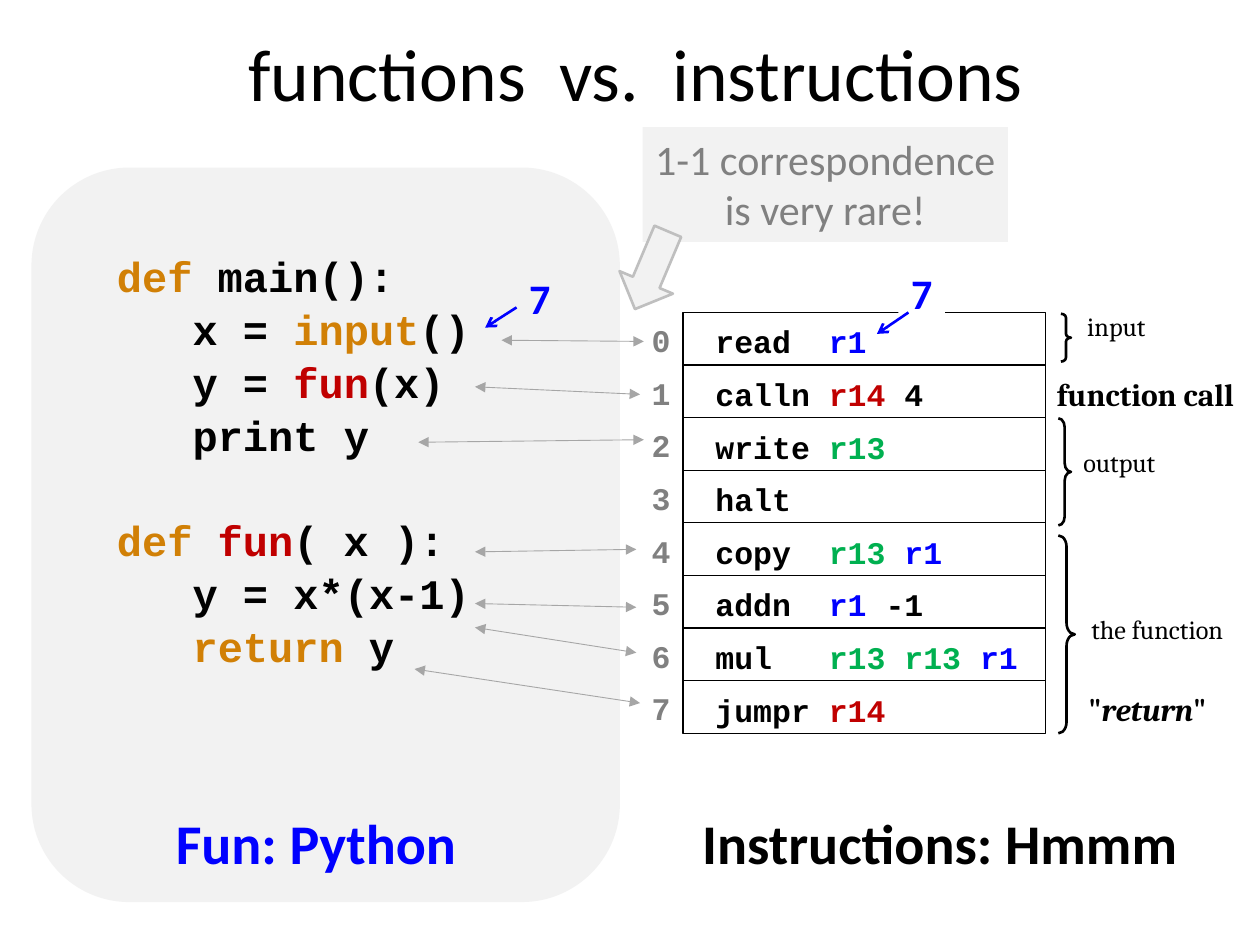
"""Build the slide that sets Python functions beside Hmmm instructions."""
from dataclasses import dataclass

from lxml import etree
from pptx import Presentation
from pptx.dml.color import RGBColor
from pptx.enum.shapes import MSO_CONNECTOR, MSO_SHAPE
from pptx.enum.text import MSO_ANCHOR, PP_ALIGN
from pptx.oxml.ns import qn
from pptx.util import Inches, Pt

LINE = MSO_CONNECTOR.STRAIGHT
RECT, ROUND = MSO_SHAPE.RECTANGLE, MSO_SHAPE.ROUNDED_RECTANGLE
BRACE, DOWN = MSO_SHAPE.RIGHT_BRACE, MSO_SHAPE.DOWN_ARROW
LEFT, CENTER, RIGHT = PP_ALIGN.LEFT, PP_ALIGN.CENTER, PP_ALIGN.RIGHT
TOP = MSO_ANCHOR.TOP


@dataclass(frozen=True)
class Theme:
    """Colours, fonts and type sizes."""
    black: str = "000000"
    white: str = "FFFFFF"
    panel: str = "F2F2F2"
    outline: str = "BFBFBF"
    link: str = "A6A6A6"
    grey: str = "808080"
    blue: str = "0000FF"
    red: str = "C00000"
    green: str = "00B050"
    orange: str = "D18006"
    sans: str = "Calibri"
    serif: str = "Cambria"
    mono: str = "Courier New"
    title: int = 42
    heading: int = 32
    code: int = 24
    label: int = 18
    note: int = 15


T = Theme()
ROW_LEFT, ROW_TOP, ROW_W, ROW_H = 5.42, 2.48, 2.88, 3.34 / 8

SOURCE = [
    (13, [("def", T.orange), (" main():", T.black)]),
    (13, [("   x = ", T.black), ("input", T.orange), ("()", T.black)]),
    (13, [("   y = ", T.black), ("fun", T.red), ("(x)", T.black)]),
    (13, [("   print y", T.black)]),
    (42.5, [("def ", T.orange), ("fun", T.red), ("( x ):", T.black)]),
    (13, [("   y = x*(x-1)", T.black)]),
    (13, [("   return ", T.orange), ("y", T.black)]),
]
INSTRUCTIONS = [
    [("read  ", T.black), ("r1", T.blue)],
    [("calln ", T.black), ("r14", T.red), (" 4", T.black)],
    [("write ", T.black), ("r13", T.green)],
    [("halt", T.black)],
    [("copy  ", T.black), ("r13 ", T.green), ("r1", T.blue)],
    [("addn  ", T.black), ("r1 ", T.blue), ("-1", T.black)],
    [("mul   ", T.black), ("r13 r13 ", T.green), ("r1", T.blue)],
    [("jumpr ", T.black), ("r14", T.red)],
]
LINKS = [
    (3.98, 2.7, 5.11, 2.71), (3.77, 3.07, 5.08, 3.13),
    (3.32, 3.51, 5.11, 3.49), (3.77, 4.38, 5.05, 4.36),
    (3.77, 4.79, 5.05, 4.82), (3.77, 4.98, 5.05, 5.18),
    (3.29, 5.31, 5.08, 5.58),
]
BRACES = [(8.42, 2.49, 0.08, 0.38, 0.39), (8.4, 3.32, 0.1, 0.85, 0.69),
          (8.4, 4.25, 0.13, 1.57, 0.69)]
NOTES = [("input", 8.53, 2.41, 0.99, LEFT), ("output", 8.5, 3.49, 1.13, LEFT),
         ("the function", 8.5, 4.82, 1.37, CENTER)]


class Canvas:
    """Draws styled elements on the current slide."""

    def __init__(self, s, theme):
        self.s, self.theme = s, theme

    def add_runs(self, p, runs, size, font, bold=False, italics=()):
        """Add coloured runs to a paragraph."""
        for text, colour in runs:
            r = p.add_run()
            r.text = text
            r.font.size, r.font.name, r.font.bold = Pt(size), font, bold
            r.font.italic = text in italics
            r.font.color.rgb = RGBColor.from_string(colour)

    def frame(self, sp, wrap=True):
        """Prepare the text frame of a shape."""
        tf = sp.text_frame
        tf.word_wrap, tf.vertical_anchor = wrap, TOP
        return tf

    def text(self, box, runs, size, font, align=LEFT, wrap=True, **style):
        """Add a text box of one paragraph."""
        sp = self.s.shapes.add_textbox(*map(Inches, box))
        p = self.frame(sp, wrap).paragraphs[0]
        p.alignment = align
        self.add_runs(p, runs, size, font, **style)
        return sp

    def code(self, box, lines):
        """Add a listing with one paragraph per line of code."""
        tf = self.frame(self.s.shapes.add_textbox(*map(Inches, box)))
        for i, (space, runs) in enumerate(lines):
            p = tf.add_paragraph() if i else tf.paragraphs[0]
            p.line_spacing, p.space_before = 0.6, Pt(space)
            self.add_runs(p, runs, self.theme.code, self.theme.mono, bold=True)

    def shape(self, kind, box, fill=None, line=None, width=1.5):
        """Add a preset shape."""
        sp = self.s.shapes.add_shape(kind, *map(Inches, box))
        sp.shadow.inherit = False
        if fill:
            sp.fill.solid()
            sp.fill.fore_color.rgb = RGBColor.from_string(fill)
        else:
            sp.fill.background()
        if line:
            sp.line.color.rgb = RGBColor.from_string(line)
            sp.line.width = Pt(width)
        else:
            sp.line.fill.background()
        return sp

    def arrow(self, ends, colour, width, tail, head=None):
        """Add a straight arrow."""
        c = self.s.shapes.add_connector(LINE, *map(Inches, ends))
        c.line.color.rgb = RGBColor.from_string(colour)
        c.line.width = Pt(width)
        ln = c._element.spPr.find(qn("a:ln"))
        for tag, kind in (("a:headEnd", head), ("a:tailEnd", tail)):
            if kind:
                etree.SubElement(ln, qn(tag)).set("type", kind)
        etree.SubElement(c._element.spPr, qn("a:effectLst"))

    def value(self, x, y, ends):
        """Add the input value 7 with its pointer."""
        t = self.theme
        sp = self.text((x, y, 0.37, 0.51), [("7", t.blue)], t.code, t.sans,
                       CENTER, wrap=False, bold=True)
        sp.fill.solid()
        sp.fill.fore_color.rgb = RGBColor.from_string(
            t.panel if x < ROW_LEFT else t.white)
        self.arrow(ends, t.blue, 1.5, "arrow")


def main():
    """Build and save the slide."""
    prs = Presentation()
    prs.slide_width, prs.slide_height = Inches(10), Inches(7.5)
    c = Canvas(prs.slides.add_slide(prs.slide_layouts[6]), T)

    c.shape(ROUND, (0.25, 1.33, 4.67, 5.83), T.panel)
    c.value(4.1, 2.11, (4.1, 2.44, 3.85, 2.6))
    c.code((0.83, 2.08, 3.5, 3.49), SOURCE)
    c.text((1.26, 0.17, 7.57, 0.81), [("functions  vs.  instructions", T.black)],
           T.title, T.sans, CENTER)
    for title, x, w, colour in (("Fun: Python", 1.11, 2.8, T.blue),
                                ("Instructions: Hmmm", 5.17, 4.58, T.black)):
        c.text((x, 6.37, w, 0.64), [(title, colour)], T.heading, T.sans,
               CENTER, bold=True)

    for *box, curve in BRACES:
        c.shape(BRACE, box, line=T.black).adjustments[0] = curve
    for note, x, y, w, align in NOTES:
        c.text((x, y, w, 0.35), [(note, T.black)], T.note, T.serif, align)
    c.text((8.29, 2.93, 1.71, 0.4), [("function call", T.black)],
           T.label, T.serif, bold=True)
    c.text((8.54, 5.43, 1.33, 0.4),
           [('"', T.black), ("return", T.black), ('"', T.black)],
           T.label, T.serif, bold=True, italics=("return",))

    for ends in LINKS:
        c.arrow(ends, T.link, 0.5, "triangle", "triangle")
    sp = c.shape(RECT, (5.1, 1.01, 2.9, 0.91), T.panel)
    p = c.frame(sp).paragraphs[0]
    p.alignment = CENTER
    c.add_runs(p, [("1-1 correspondence is very rare!", T.grey)], T.code, T.sans)
    c.shape(DOWN, (4.94, 1.81, 0.46, 0.67), T.panel, T.outline).rotation = 22.9

    for i, runs in enumerate(INSTRUCTIONS):
        y = ROW_TOP + i * ROW_H
        c.shape(RECT, (ROW_LEFT, y, ROW_W, ROW_H), line=T.black, width=0.75)
        c.text((5.58, y + 0.03, 2.7, 0.4), runs, T.label, T.mono, bold=True)
        c.text((4.75, y + 0.02, 0.67, 0.4), [(str(i), T.grey)],
               T.label, T.mono, RIGHT, bold=True)
    c.value(7.13, 2.07, (7.21, 2.48, 6.96, 2.65))

    prs.save("out.pptx")


if __name__ == "__main__":
    main()
